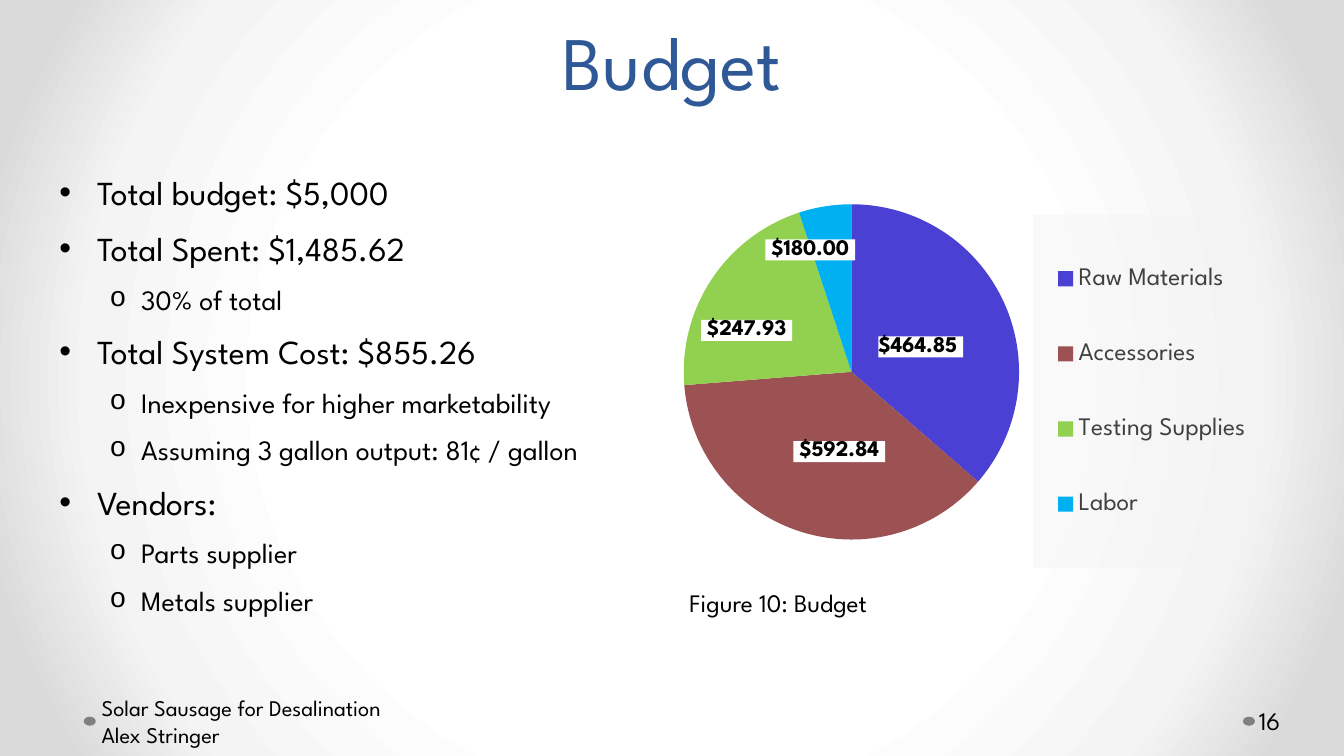
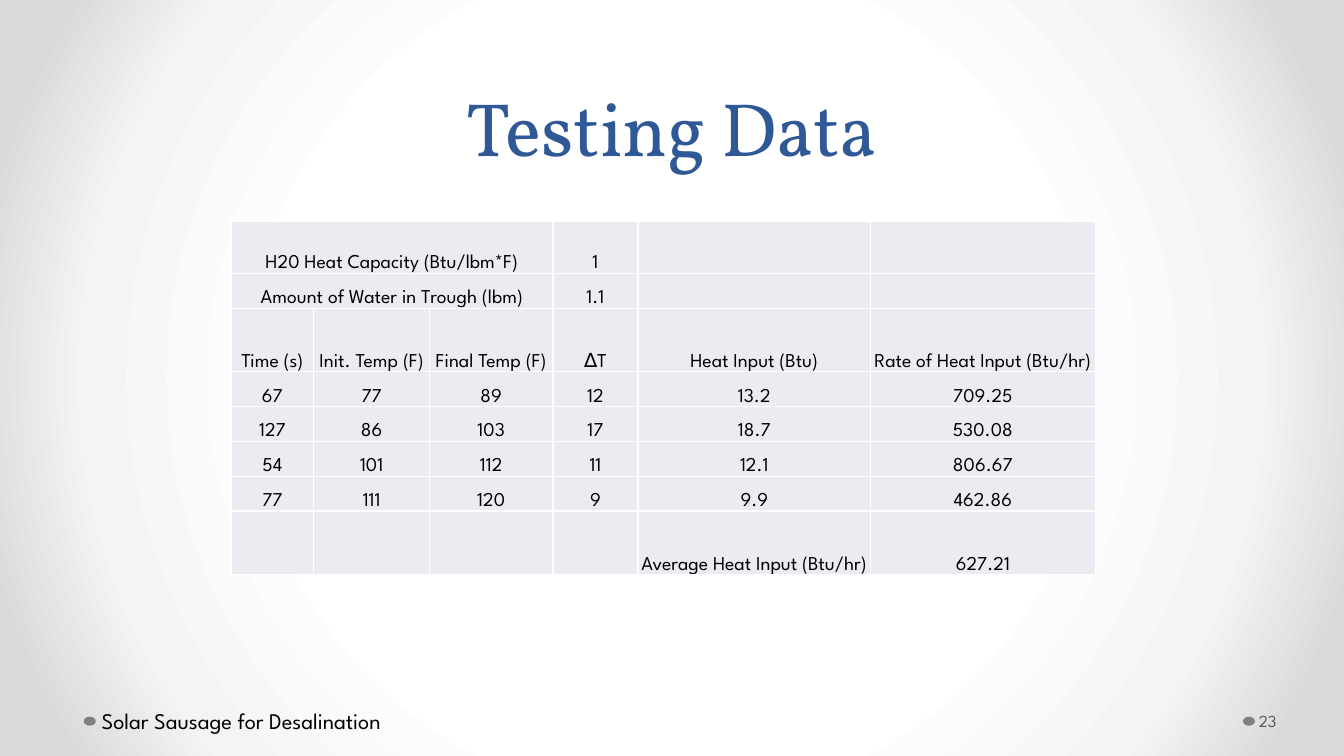
from dataclasses import dataclass

from lxml.etree import SubElement
from pptx import Presentation
from pptx.chart.data import CategoryChartData
from pptx.dml.color import RGBColor
from pptx.enum.chart import XL_CHART_TYPE, XL_LABEL_POSITION, XL_LEGEND_POSITION
from pptx.enum.shapes import MSO_SHAPE
from pptx.enum.text import MSO_ANCHOR, PP_ALIGN
from pptx.oxml import parse_xml
from pptx.oxml.ns import nsdecls, qn
from pptx.util import Pt

SANS, SERIF = "League Spartan", "Vollkorn"
BLACK, WHITE, BLUE, GRAY = "000000", "FFFFFF", "2F5897", "808080"
CELL = "EAECF2"
STOPS = [(50, WHITE), (76, "F4F4F4"), (92, "DADADA")]


@dataclass
class Item:
    text: str
    level: int = 0


@dataclass
class Level:
    size: float
    left: float
    hang: float
    mark: str
    font: str


@dataclass
class Slice:
    name: str
    value: int
    label: str
    color: str
    dx: float
    dy: float


LEVELS = [
    Level(24, 27, 27, "•", "Arial"),
    Level(20, 58.5, 22.5, "o", "Courier New"),
]
ITEMS = [
    Item("Total budget: $5,000"),
    Item("Total Spent: $1,485.62"),
    Item("30% of total", 1),
    Item("Total System Cost: $855.26"),
    Item("Inexpensive for higher marketability", 1),
    Item("Assuming 3 gallon output: 81¢ / gallon", 1),
    Item("Vendors:"),
    Item("Parts supplier", 1),
    Item("Metals supplier", 1),
]
SLICES = [
    Slice("Raw Materials", 36, "$464.85 ", "4B40D4", -0.01, 0.02),
    Slice("Accessories", 37, " $592.84 ", "9C5252", 0.02, 0),
    Slice("Testing Supplies", 21, " $247.93 ", "92D050", -0.05, 0.01),
    Slice("Labor", 5, " $180.00 ", "00B0F0", -0.04, -0.08),
]
COLS = [59.2, 82.6, 88.2, 60.8, 166.2, 160.4]
HEIGHTS = [37.4, 24.9, 45.4, 24.9, 24.9, 24.9, 24.9, 45.4]
ROWS = [
    ["H20 Heat Capacity (Btu/lbm*F)", "", "", "1", "", ""],
    ["Amount of Water in Trough (lbm)", "", "", "1.1", "", ""],
    ["Time (s)", "Init. Temp (F)", "Final Temp (F)", "∆T",
     "Heat Input (Btu)", "Rate of Heat Input (Btu/hr)"],
    ["67", "77", "89", "12", "13.2", "709.25"],
    ["127", "86", "103", "17", "18.7", "530.08"],
    ["54", "101", "112", "11", "12.1", "806.67"],
    ["77", "111", "120", "9", "9.9", "462.86"],
    ["", "", "", "", "Average Heat Input (Btu/hr)", "627.21"],
]


def tint(color: str) -> RGBColor:
    return RGBColor.from_string(color)


def write(para, text: str, size: float = 18, color: str = BLACK, font: str = SANS,
          bold: bool = False, align=None, pitch=None):
    run = para.add_run()
    run.text = text
    run.font.size, run.font.name, run.font.bold = Pt(size), font, bold
    run.font.color.rgb = tint(color)
    if align is not None:
        para.alignment = align
    if pitch:
        para.line_spacing = Pt(pitch)


def frame(slide, left, top, width, height, anchor=MSO_ANCHOR.TOP, pads=(7.2, 3.6, 7.2, 3.6)):
    area = slide.shapes.add_textbox(Pt(left), Pt(top), Pt(width), Pt(height)).text_frame
    area.word_wrap, area.vertical_anchor = True, anchor
    (area.margin_left, area.margin_top,
     area.margin_right, area.margin_bottom) = map(Pt, pads)
    return area


def paras(area, count: int):
    while len(area.paragraphs) < count:
        area.add_paragraph()
    return area.paragraphs


def paint(deck):
    fill = deck.slide_master.background.fill
    fill.gradient()
    old = next(deck.slide_master.element.iter(qn("a:gradFill")))
    stops = "".join(f'<a:gs pos="{at * 1000}"><a:srgbClr val="{color}"/></a:gs>'
                    for at, color in STOPS)
    old.getparent().replace(old, parse_xml(
        f'<a:gradFill {nsdecls("a")} rotWithShape="1"><a:gsLst>{stops}</a:gsLst>'
        '<a:path path="circle"><a:fillToRect l="50000" t="50000" r="50000" b="50000"/>'
        '</a:path></a:gradFill>'))


def start(deck, title: str, bottom: float, font: str, foot: list[str],
          page: str, size: float, color: str):
    """Add a slide with its title, footer dots, footer text and page number."""
    slide = deck.slides.add_slide(deck.slide_layouts[6])
    for left in (887.8, 59.8):
        dot = slide.shapes.add_shape(MSO_SHAPE.OVAL, Pt(left), Pt(511.9), Pt(8.6), Pt(6.5))
        dot.shadow.inherit = False
        dot.fill.solid()
        dot.fill.fore_color.rgb = tint(GRAY)
        dot.line.fill.background()
    head = frame(slide, 48, 0, 864, bottom, MSO_ANCHOR.BOTTOM)
    write(head.paragraphs[0], title, size=54, color=BLUE, font=font,
          align=PP_ALIGN.CENTER, pitch=58)
    note = frame(slide, 69, 500.4, 299, 28.8, MSO_ANCHOR.MIDDLE, (3.6, 3.6, 7.2, 3.6))
    for para, line in zip(paras(note, len(foot)), foot):
        write(para, line, size=16)
    num = frame(slide, 897, 500.4, 59, 28.8, MSO_ANCHOR.MIDDLE, (2.2, 3.6, 3.6, 3.6))
    write(num.paragraphs[0], page, size=size, color=color)
    return slide


def bullets(area, items: list[Item]):
    for para, item in zip(paras(area, len(items)), items):
        level = LEVELS[item.level]
        write(para, item.text, size=level.size)
        props = para._p.get_or_add_pPr()
        props.set("marL", str(Pt(level.left)))
        props.set("indent", str(-Pt(level.hang)))
        SubElement(SubElement(props, qn("a:spcBef")), qn("a:spcPct")).set("val", "20000")
        para.space_after = Pt(6)
        SubElement(props, qn("a:buFont")).set("typeface", level.font)
        SubElement(props, qn("a:buChar")).set("char", level.mark)


def place(inner: bool = False, **spots: float):
    modes = "".join(f'<c:{key}Mode val="edge"/>' for key in "xy") if len(spots) > 2 else ""
    aim = '<c:layoutTarget val="inner"/>' if inner else ""
    vals = "".join(f'<c:{key} val="{val}"/>' for key, val in spots.items())
    return parse_xml(f'<c:layout {nsdecls("c")}><c:manualLayout>{aim}{modes}{vals}'
                     '</c:manualLayout></c:layout>')


def back(color: str, alpha: int = 100):
    return parse_xml(
        f'<c:spPr {nsdecls("c", "a")}><a:solidFill><a:srgbClr val="{color}">'
        f'<a:alpha val="{alpha * 1000}"/></a:srgbClr></a:solidFill></c:spPr>')


def pie(slide):
    data = CategoryChartData()
    data.categories = [part.name for part in SLICES]
    data.add_series("Series 1", [part.value for part in SLICES])
    chart = slide.shapes.add_chart(XL_CHART_TYPE.PIE, Pt(443.5), Pt(66.2),
                                   Pt(499), Pt(350), data).chart
    chart.has_title = False
    chart.font.size, chart.font.name = Pt(10), SERIF
    chart.font.color.rgb = tint(BLACK)
    chart.plots[0].vary_by_categories = True
    series = chart.plots[0].series[0]
    for spot, part in enumerate(SLICES):
        point = series.points[spot]
        point.format.fill.solid()
        point.format.fill.fore_color.rgb = tint(part.color)
        point.format.line.fill.background()
        label = point.data_label
        write(label.text_frame.paragraphs[0], part.label, size=16, bold=True)
        label.position = XL_LABEL_POSITION.CENTER
    for node, part in zip(series._element.iter(qn("c:dLbl")), SLICES):
        node.insert(1, place(x=part.dx, y=part.dy))
        node.find(qn("c:tx")).addnext(back(WHITE))

    plot = next(chart._chartSpace.iter(qn("c:plotArea")))
    for old in plot.findall(qn("c:layout")):
        plot.remove(old)
    plot.insert(0, place(inner=True, x=0.09, y=0.19, w=0.48, h=0.76))

    chart.has_legend = True
    legend = chart.legend
    legend.position, legend.include_in_layout = XL_LEGEND_POSITION.RIGHT, False
    legend.font.size, legend.font.name = Pt(18), SANS
    legend.font.color.rgb = tint("404040")
    node = legend._element
    for old in node.findall(qn("c:layout")):
        node.remove(old)
    node.find(qn("c:legendPos")).addnext(place(x=0.59, y=0.25, w=0.34, h=0.72))
    node.find(qn("c:overlay")).addnext(back("F2F2F2", 39))


def edge(cell):
    props = cell._tc.get_or_add_tcPr()
    for spot, side in enumerate(("lnL", "lnR", "lnT", "lnB")):
        props.insert(spot, parse_xml(
            f'<a:{side} {nsdecls("a")} w="{Pt(1)}"><a:solidFill>'
            f'<a:srgbClr val="{WHITE}"/></a:solidFill></a:{side}>'))


def grid(slide):
    table = slide.shapes.add_table(len(ROWS), len(COLS), Pt(165), Pt(157.8),
                                   Pt(sum(COLS)), Pt(sum(HEIGHTS))).table
    table.first_row = table.horz_banding = False
    for col, width in zip(table.columns, COLS):
        col.width = Pt(width)
    for row, height, texts in zip(table.rows, HEIGHTS, ROWS):
        row.height = Pt(height)
        for cell, text in zip(row.cells, texts):
            cell.margin_left = cell.margin_right = cell.margin_top = Pt(0.7)
            cell.margin_bottom = Pt(0)
            cell.vertical_anchor = MSO_ANCHOR.BOTTOM
            cell.fill.solid()
            cell.fill.fore_color.rgb = tint(CELL)
            edge(cell)
            if text:
                write(cell.text_frame.paragraphs[0], text, size=14, align=PP_ALIGN.CENTER)
    for row in range(2):
        table.cell(row, 0).merge(table.cell(row, 2))


def main():
    deck = Presentation()
    deck.slide_width, deck.slide_height = Pt(960), Pt(540)
    paint(deck)
    foot = ["Solar Sausage for Desalination", "Alex Stringer"]

    cost = start(deck, "Budget", 79.2, SANS, foot, "16", 18, BLACK)
    bullets(frame(cost, 35.3, 119.5, 450.7, 355.7), ITEMS)
    pie(cost)
    write(frame(cost, 485.3, 416.2, 362, 28.8).paragraphs[0], "Figure 10: Budget")

    test = start(deck, "Testing Data", 126, SERIF, foot[:1], "23", 12, "595959")
    grid(test)
    deck.save("out.pptx")


if __name__ == "__main__":
    main()
